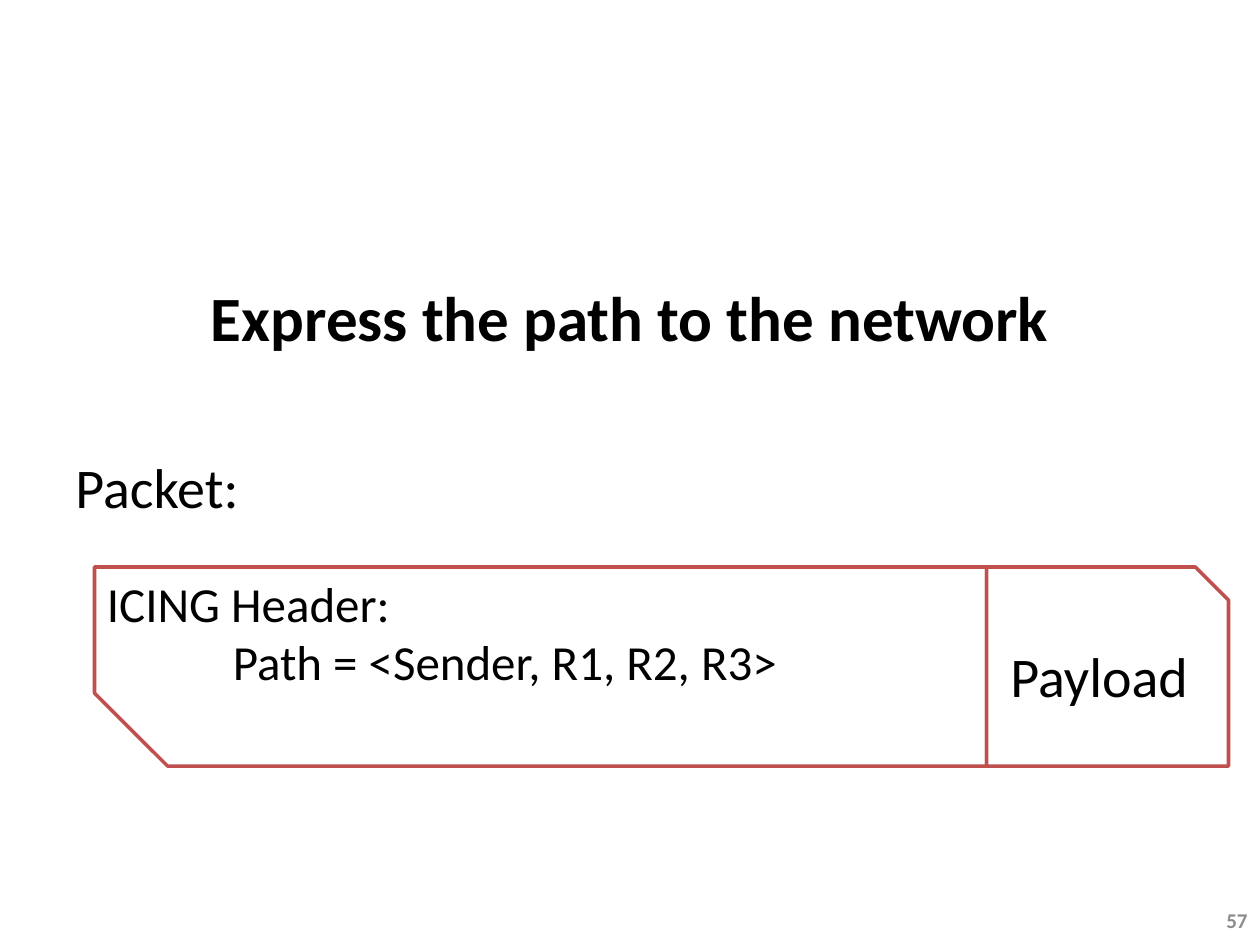
from pptx import Presentation
from pptx import util as u
from pptx.dml import color
from pptx.enum import shapes, text


def rgb(value):
    return color.RGBColor.from_string(value)


def write(frame, lines, size=32, hue="000000", bold=False, font="Calibri",
          align=text.PP_ALIGN.LEFT, anchor=text.MSO_ANCHOR.TOP, indents=()):
    frame.word_wrap = True
    frame.vertical_anchor = anchor
    for index, line in enumerate(lines):
        para = frame.paragraphs[0] if index == 0 else frame.add_paragraph()
        para.alignment = align
        if index < len(indents):
            para._p.get_or_add_pPr().set("marL", str(u.Inches(indents[index])))
        span = para.add_run()
        span.text = line
        span.font.name = font
        span.font.size = u.Pt(size)
        span.font.bold = bold
        span.font.color.rgb = rgb(hue)


class SlideBuilder:
    fill = "FFFFFF"
    outline = "C0504D"
    outline_width = 2

    def __init__(self, page):
        self.page = page

    def label(self, left, top, width, height, *lines, **style):
        box = self.page.shapes.add_textbox(
            u.Inches(left), u.Inches(top), u.Inches(width), u.Inches(height))
        write(box.text_frame, lines, **style)

    def snipped_box(self, left, top, width, height, snip=0.16667, rotation=0):
        box = self.page.shapes.add_shape(
            shapes.MSO_SHAPE.SNIP_1_RECTANGLE,
            u.Inches(left), u.Inches(top), u.Inches(width), u.Inches(height))
        box.adjustments[0] = snip
        box.rotation = rotation
        box.shadow.inherit = False
        box.fill.solid()
        box.fill.fore_color.rgb = rgb(self.fill)
        box.line.color.rgb = rgb(self.outline)
        box.line.width = u.Pt(self.outline_width)
        return box


def main():
    deck = Presentation()
    deck.slide_width, deck.slide_height = u.Inches(10), u.Inches(7.5)
    slide = SlideBuilder(deck.slides.add_slide(deck.slide_layouts[6]))
    center, middle = text.PP_ALIGN.CENTER, text.MSO_ANCHOR.MIDDLE

    slide.label(0.5, 2.16, 9, 0.71, "Express the path to the network",
                size=36, bold=True, align=center)
    slide.label(0.5, 3.54, 9, 0.64, "Packet:")
    slide.label(9.31, 7.1, 0.69, 0.4, "57", size=12, hue="8C8C8C", bold=True,
                align=text.PP_ALIGN.RIGHT, anchor=middle)

    left, top, height = 0.75, 4.5, 1.58
    header_width, payload_width = 7.08, 1.92
    slide.snipped_box(left, top, header_width, height, snip=0.367, rotation=180)
    payload = slide.snipped_box(left + header_width, top, payload_width, height)
    write(payload.text_frame, ["Payload"], align=center, anchor=middle)
    slide.label(left, top, header_width, 1.04, "ICING Header:",
                "Path = <Sender, R1, R2, R3>", size=28, indents=(0, 1))

    deck.save("out.pptx")


if __name__ == "__main__":
    main()
